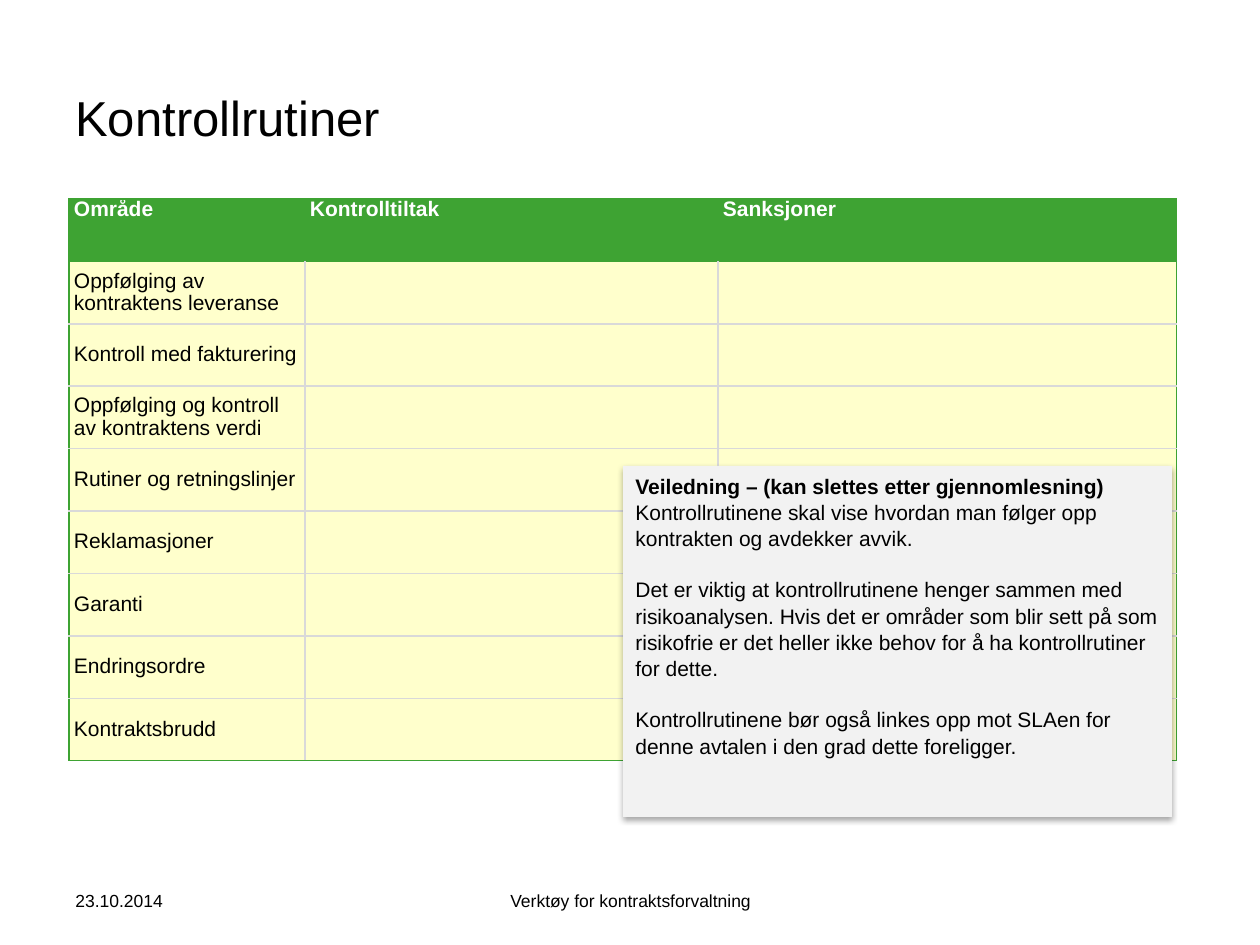
from lxml.etree import SubElement
from pptx import Presentation
from pptx.dml.color import RGBColor
from pptx.enum.shapes import MSO_SHAPE
from pptx.enum.text import MSO_ANCHOR, PP_ALIGN
from pptx.oxml import parse_xml
from pptx.oxml.ns import nsdecls, qn
from pptx.util import Emu, Pt

PX = 914400 / 126
BLACK = RGBColor(0x00, 0x00, 0x00)
WHITE = RGBColor(0xFF, 0xFF, 0xFF)
GREEN = RGBColor(0x3E, 0xA3, 0x33)
YELLOW = RGBColor(0xFF, 0xFF, 0xCC)
LINE_GRAY = RGBColor(0xD9, 0xD9, 0xD9)
NOTE_GRAY = RGBColor(0xF2, 0xF2, 0xF2)

AREAS = [
    "Oppfølging av kontraktens leveranse",
    "Kontroll med fakturering",
    "Oppfølging og kontroll av kontraktens verdi",
    "Rutiner og retningslinjer",
    "Reklamasjoner",
    "Garanti",
    "Endringsordre",
    "Kontraktsbrudd",
]
# Text and space before in points
GUIDANCE = [
    ("Veiledning – (kan slettes etter gjennomlesning)", 0),
    ("Kontrollrutinene skal vise hvordan man følger opp kontrakten og avdekker avvik.", 0),
    ("Det er viktig at kontrollrutinene henger sammen med risikoanalysen. Hvis det er "
     "områder som blir sett på som risikofrie er det heller ikke behov for å ha "
     "kontrollrutiner for dette.", 14.4),
    ("Kontrollrutinene bør også linkes opp mot SLAen for denne avtalen i den grad "
     "dette foreligger.", 14.4),
]


def px(*values):
    return [Emu(round(v * PX)) for v in values]


def set_font(p, size, color=BLACK, bold=False):
    p.font.name = "Arial"
    p.font.size = Pt(size)
    p.font.bold = bold
    p.font.color.rgb = color


prs = Presentation()
prs.slide_width, prs.slide_height = px(1260, 945)
s = prs.slides.add_slide(prs.slide_layouts[6])

# Title, date and footer
for text, box, size, align in [
    ("Kontrollrutiner", (63, 38, 1134, 158), 28, PP_ALIGN.LEFT),
    ("23.10.2014", (63, 876, 294, 50), 10, PP_ALIGN.LEFT),
    ("Verktøy for kontraktsforvaltning", (431, 876, 399, 50), 10, PP_ALIGN.CENTER),
]:
    tf = s.shapes.add_textbox(*px(*box)).text_frame
    tf.word_wrap = True
    tf.vertical_anchor = MSO_ANCHOR.MIDDLE
    p = tf.paragraphs[0]
    p.text = text
    p.alignment = align
    set_font(p, size)

# Control table
rows = [["Område", "Kontrolltiltak", "Sanksjoner"]] + [[area, "", ""] for area in AREAS]
last_row, last_col = len(rows) - 1, 2
table = s.shapes.add_table(len(rows), 3, *px(69, 199, 1108, 562)).table
for column, width in zip(table.columns, px(236, 413, 459)):
    column.width = width

for i, row in enumerate(rows):
    header = i == 0
    for j, text in enumerate(row):
        cell = table.cell(i, j)
        cell.margin_left, cell.margin_right = px(5, 5)
        cell.margin_top = cell.margin_bottom = 0
        cell.vertical_anchor = MSO_ANCHOR.TOP if header else MSO_ANCHOR.MIDDLE
        p = cell.text_frame.paragraphs[0]
        p.text = text
        p.line_spacing = 0.95
        set_font(p, 12, WHITE if header else BLACK, header)
        green_sides = {
            "lnL": header or j == 0,
            "lnR": header or j == last_col,
            "lnT": i <= 1,
            "lnB": header or i == last_row,
        }
        tcPr = cell._tc.get_or_add_tcPr()
        for side, green in green_sides.items():
            ln = SubElement(tcPr, qn(f"a:{side}"), w=str(Pt(0.75 if green else 1)))
            fill = SubElement(ln, qn("a:solidFill"))
            SubElement(fill, qn("a:srgbClr"), val=str(GREEN if green else LINE_GRAY))
        cell.fill.solid()
        cell.fill.fore_color.rgb = GREEN if header else YELLOW

# Guidance note
sp = s.shapes.add_shape(MSO_SHAPE.RECTANGLE, *px(623, 466, 549, 351))
sp.fill.solid()
sp.fill.fore_color.rgb = NOTE_GRAY
sp.line.fill.background()
sp._element.spPr.append(parse_xml(
    f'<a:effectLst {nsdecls("a")}>'
    f'<a:outerShdw blurRad="{Pt(3.1)}" dist="{Pt(1.8)}" dir="5400000" rotWithShape="0">'
    '<a:srgbClr val="000000"><a:alpha val="35000"/></a:srgbClr>'
    '</a:outerShdw></a:effectLst>'))
tf = sp.text_frame
tf.word_wrap = True
tf.vertical_anchor = MSO_ANCHOR.TOP
for i, (text, space) in enumerate(GUIDANCE):
    p = tf.paragraphs[0] if i == 0 else tf.add_paragraph()
    p.text = text
    p.alignment = PP_ALIGN.LEFT
    p.line_spacing = 1.04
    p.space_before = Pt(space)
    set_font(p, 12, bold=i == 0)

prs.save("out.pptx")
